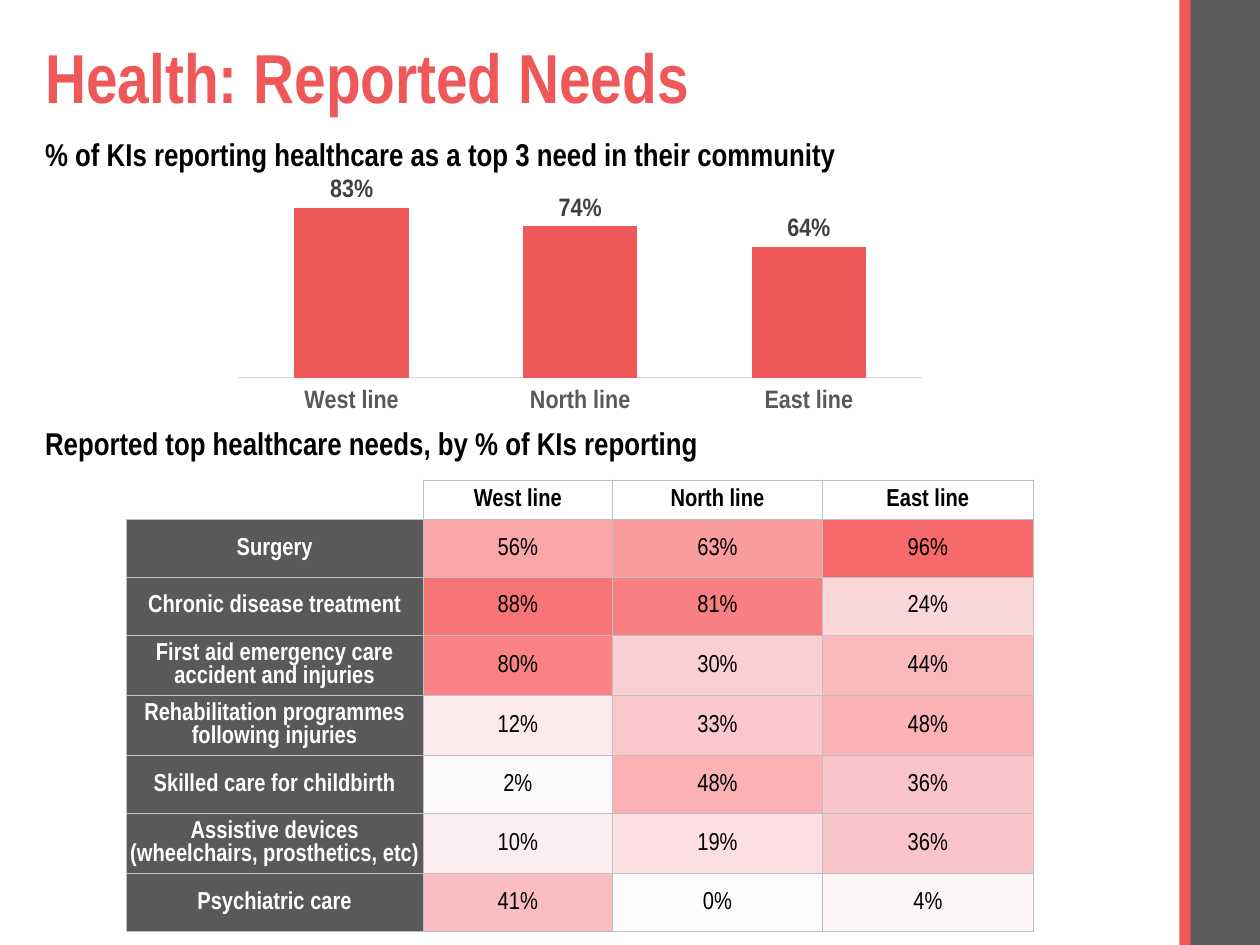
from lxml.etree import SubElement
from pptx import Presentation
from pptx.chart.data import CategoryChartData
from pptx.dml.color import RGBColor
from pptx.enum.chart import XL_CHART_TYPE, XL_LABEL_POSITION, XL_TICK_LABEL_POSITION, XL_TICK_MARK
from pptx.enum.shapes import MSO_SHAPE
from pptx.enum.text import MSO_ANCHOR, PP_ALIGN
from pptx.oxml.ns import qn
from pptx.util import Inches, Pt

FONT = "Arial Narrow"
RED = RGBColor(0xEE, 0x58, 0x59)
SIDE_GREY = RGBColor(0x5A, 0x5A, 0x5A)
GREY = RGBColor(0x59, 0x59, 0x59)
LABEL_GREY = RGBColor(0x40, 0x40, 0x40)
AXIS_GREY = RGBColor(0xD9, 0xD9, 0xD9)
BORDER_GREY = RGBColor(0xBF, 0xBF, 0xBF)
BLACK = RGBColor(0, 0, 0)
WHITE = RGBColor(255, 255, 255)
HEAT_LOW = RGBColor(0xFC, 0xFC, 0xFF)
HEAT_HIGH = RGBColor(0xF8, 0x69, 0x6B)

LINES = ["West line", "North line", "East line"]
NEEDS = [
    ("Surgery", 56, 63, 96),
    ("Chronic disease treatment", 88, 81, 24),
    ("First aid emergency care accident and injuries", 80, 30, 44),
    ("Rehabilitation programmes following injuries", 12, 33, 48),
    ("Skilled care for childbirth", 2, 48, 36),
    ("Assistive devices (wheelchairs, prosthetics, etc)", 10, 19, 36),
    ("Psychiatric care", 41, 0, 4),
]
HIGHEST = max(max(need[1:]) for need in NEEDS)


def style(font, size, color, bold=True):
    font.name = FONT
    font.size = Pt(size)
    font.bold = bold
    font.color.rgb = color


def fill_cell(cell, text, fill, color, bold, sides):
    cell.margin_left = cell.margin_right = cell.margin_top = Inches(0.01)
    cell.margin_bottom = 0
    cell.vertical_anchor = MSO_ANCHOR.MIDDLE
    properties = cell._tc.get_or_add_tcPr()
    for side in sides:
        line = SubElement(properties, qn(f"a:ln{side}"), w=str(Pt(0.5)))
        solid = SubElement(line, qn("a:solidFill"))
        SubElement(solid, qn("a:srgbClr"), val=str(BORDER_GREY))
    if fill is None:
        cell.fill.background()
        return
    cell.fill.solid()
    cell.fill.fore_color.rgb = fill
    para = cell.text_frame.paragraphs[0]
    para.text = text
    para.alignment = PP_ALIGN.CENTER
    style(para.runs[0].font, 14, color, bold)


deck = Presentation()
deck.slide_width, deck.slide_height = Inches(10), Inches(7.5)
page = deck.slides.add_slide(deck.slide_layouts[5])

# Side bars
for left, width, color in [(9.43, 0.57, SIDE_GREY), (9.36, 0.09, RED)]:
    bar = page.shapes.add_shape(MSO_SHAPE.RECTANGLE, Inches(left), 0, Inches(width), deck.slide_height)
    bar.shadow.inherit = False
    bar.fill.solid()
    bar.fill.fore_color.rgb = color
    bar.line.fill.background()

# Title
title = page.shapes.title
title.left, title.top = Inches(0.26), Inches(0.27)
title.width, title.height = Inches(8.69), Inches(0.74)
title.text_frame.text = "Health: Reported Needs"
title.text_frame.vertical_anchor = MSO_ANCHOR.MIDDLE
para = title.text_frame.paragraphs[0]
para.alignment = PP_ALIGN.LEFT
para.line_spacing = 0.9
style(para.runs[0].font, 39.6, RED)

# Section headings
for top, text in [
    (1.02, "% of KIs reporting healthcare as a top 3 need in their community"),
    (3.32, "Reported top healthcare needs, by % of KIs reporting"),
]:
    box = page.shapes.add_textbox(Inches(0.26), Inches(top), Inches(8.6), Inches(0.4))
    box.text_frame.word_wrap = True
    box.text_frame.text = text
    style(box.text_frame.paragraphs[0].runs[0].font, 18, BLACK)

# Column chart
data = CategoryChartData(number_format="0%")
data.categories = LINES
data.add_series("Series 1", [0.83, 0.74, 0.64])
chart = page.shapes.add_chart(
    XL_CHART_TYPE.COLUMN_CLUSTERED, Inches(1.77), Inches(1.42), Inches(5.67), Inches(1.9), data
).chart
style(chart.font, 12, BLACK)
chart.has_legend = False
chart.has_title = False

lines_axis = chart.category_axis
lines_axis.major_tick_mark = XL_TICK_MARK.NONE
lines_axis.tick_label_position = XL_TICK_LABEL_POSITION.LOW
lines_axis.format.line.color.rgb = AXIS_GREY
lines_axis.format.line.width = Pt(0.75)
style(lines_axis.tick_labels.font, 15, GREY)

share_axis = chart.value_axis
share_axis.visible = False
share_axis.has_major_gridlines = False
share_axis.minimum_scale, share_axis.maximum_scale = 0, 0.9

plot = chart.plots[0]
plot.gap_width, plot.overlap = 100, -27
plot.vary_by_categories = False
columns = plot.series[0]
columns.format.fill.solid()
columns.format.fill.fore_color.rgb = RED
labels = columns.data_labels
labels.show_value = True
labels.number_format, labels.number_format_is_linked = "0%", False
labels.position = XL_LABEL_POSITION.OUTSIDE_END
style(labels.font, 15, LABEL_GREY)

# Heat table
table = page.shapes.add_table(
    len(NEEDS) + 1, len(LINES) + 1, Inches(1), Inches(3.81), Inches(7.2), Inches(3.43)
).table
table.first_row = table.horz_banding = False
for column, width in zip(table.columns, [2.36, 1.5, 1.67, 1.67]):
    column.width = Inches(width)
for index, row in enumerate(table.rows):
    row.height = Inches(0.46 if index else 0.21)

fill_cell(table.cell(0, 0), "", None, BLACK, True, "RB")
for column, name in enumerate(LINES, 1):
    fill_cell(table.cell(0, column), name, WHITE, BLACK, True, "LRTB")
for row, (need, *shares) in enumerate(NEEDS, 1):
    fill_cell(table.cell(row, 0), need, GREY, WHITE, True, "LRTB")
    for column, share in enumerate(shares, 1):
        # Shade runs evenly from zero to the highest share
        heat = RGBColor(*(round(low + (high - low) * share / HIGHEST)
                          for low, high in zip(HEAT_LOW, HEAT_HIGH)))
        fill_cell(table.cell(row, column), f"{share}%", heat, BLACK, False, "LRTB")

deck.save("out.pptx")
